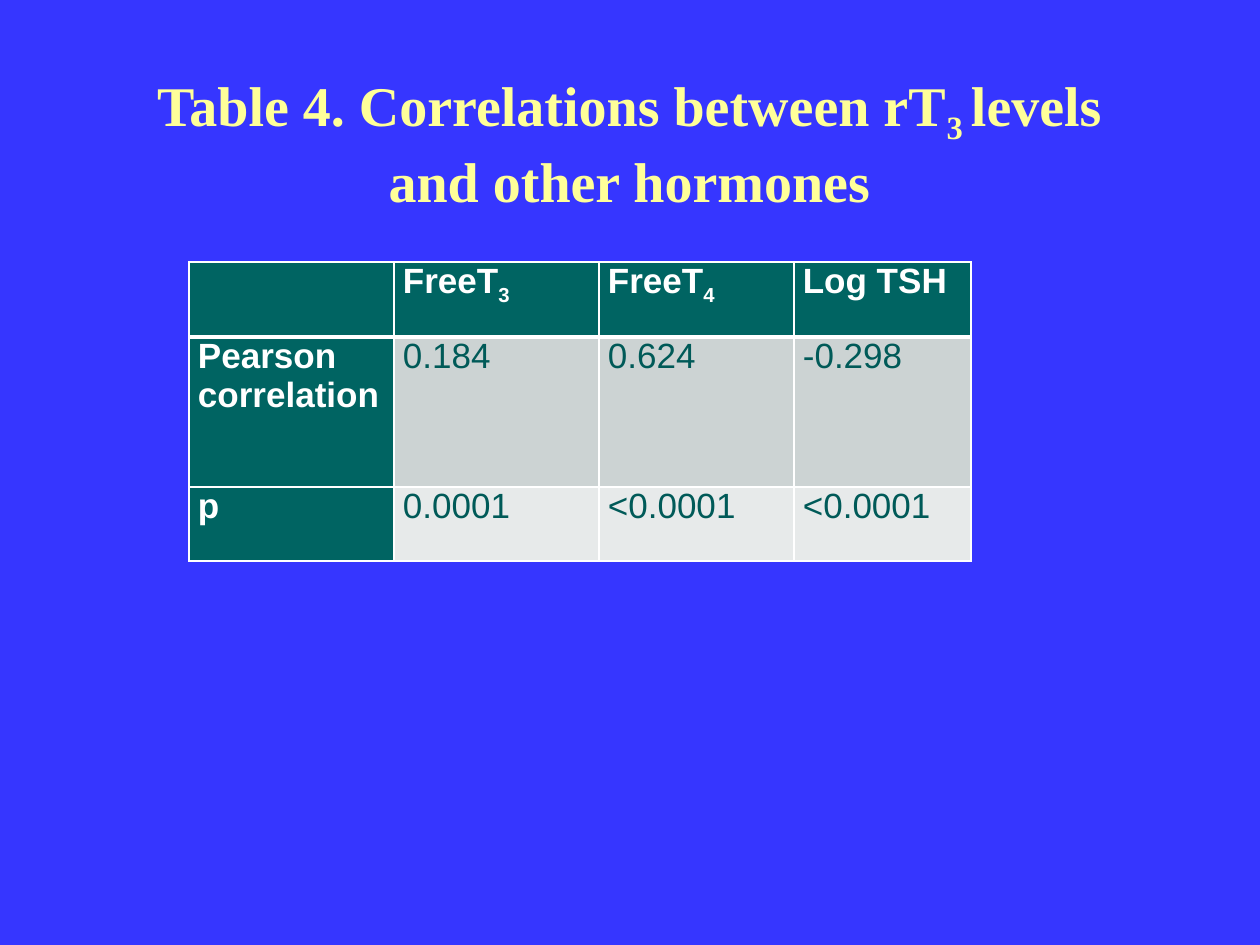
from lxml import etree
from pptx import Presentation
from pptx.dml.color import RGBColor
from pptx.enum.text import MSO_ANCHOR, PP_ALIGN
from pptx.oxml.ns import qn
from pptx.util import Emu, Pt

TOP = MSO_ANCHOR.TOP
CENTER = PP_ALIGN.CENTER
LEFT = PP_ALIGN.LEFT
EMU_PER_PX = 914400 / 126

BACKGROUND = "3636FF"
YELLOW = "FFFF99"
WHITE = "FFFFFF"
TEAL = "006462"
DARK_TEAL = "005A58"
BAND_FILLS = ["CCD3D3", "E7EAEA"]

COLUMN_WIDTHS = [205, 205, 195, 177]
ROW_HEIGHTS = [75, 150, 74]
# Each cell is a list of (text, is_subscript) runs
ROWS = [
    [[], [("FreeT", False), ("3", True)], [("FreeT", False), ("4", True)],
     [("Log TSH", False)]],
    [[(text, False)] for text in
     ("Pearson correlation", "0.184", "0.624", "-0.298")],
    [[(text, False)] for text in ("p", "0.0001", "<0.0001", "<0.0001")],
]


def px(length):
    return Emu(round(length * EMU_PER_PX))


def color(value):
    return RGBColor.from_string(value)


class SlideBuilder:
    def __init__(self, slide):
        self.slide = slide
        self.title_font, self.title_size = "Times New Roman", 32
        self.table_font, self.table_size = "Arial", 20

    def background(self, fill):
        self.slide.background.fill.solid()
        self.slide.background.fill.fore_color.rgb = color(fill)

    def runs(self, para, parts, font, size, text_color, bold):
        for text, is_subscript in parts:
            span = para.add_run()
            span.text = text
            span.font.name, span.font.size = font, Pt(size)
            span.font.bold = bold
            span.font.color.rgb = color(text_color)
            if is_subscript:
                span.font._element.set("baseline", "-25000")

    def title(self, left, top, width, height, parts):
        box = self.slide.shapes.add_textbox(*map(px, (left, top, width, height)))
        frame = box.text_frame
        frame.word_wrap = True
        frame.vertical_anchor = TOP
        frame.margin_top = frame.margin_bottom = 0
        para = frame.paragraphs[0]
        para.alignment = CENTER
        self.runs(para, parts, self.title_font, self.title_size, YELLOW, True)

    def borders(self, cell, widths):
        properties = cell._tc.get_or_add_tcPr()
        for index, (side, width) in enumerate(widths.items()):
            line = etree.Element(qn(f"a:ln{side}"), w=str(Pt(width)))
            fill = etree.SubElement(line, qn("a:solidFill"))
            etree.SubElement(fill, qn("a:srgbClr"), val=WHITE)
            properties.insert(index, line)

    def cell(self, cell, parts, fill, text_color, bold):
        cell.fill.solid()
        cell.fill.fore_color.rgb = color(fill)
        cell.margin_left = cell.margin_right = px(9)
        cell.margin_top = cell.margin_bottom = 0
        cell.vertical_anchor = TOP
        para = cell.text_frame.paragraphs[0]
        para.alignment = LEFT
        self.runs(para, parts, self.table_font, self.table_size, text_color, bold)

    def table(self, left, top, column_widths, row_heights, rows):
        table = self.slide.shapes.add_table(
            len(rows), len(column_widths), px(left), px(top),
            px(sum(column_widths)), px(sum(row_heights))).table
        table.first_col = True
        for column, width in zip(table.columns, column_widths):
            column.width = px(width)
        for row, height in zip(table.rows, row_heights):
            row.height = px(height)
        for r, row in enumerate(rows):
            for c, parts in enumerate(row):
                is_header = r == 0 or c == 0
                fill = TEAL if is_header else BAND_FILLS[r - 1]
                text_color = WHITE if is_header else DARK_TEAL
                cell = table.cell(r, c)
                self.cell(cell, parts, fill, text_color, is_header)
                # A heavy rule separates the header row from the body
                self.borders(cell, {"L": 1, "R": 1, "T": 3 if r == 1 else 1,
                                    "B": 3 if r == 0 else 1})


def main():
    deck = Presentation()
    deck.slide_width, deck.slide_height = px(1260), px(945)
    page = SlideBuilder(deck.slides.add_slide(deck.slide_layouts[6]))
    page.background(BACKGROUND)

    # Title
    page.title(94, 70, 1071, 158, [
        ("Table 4. Correlations between rT", False), ("3 ", True),
        ("levels and other hormones", False)])

    # Correlation table
    page.table(189, 262, COLUMN_WIDTHS, ROW_HEIGHTS, ROWS)

    deck.save("out.pptx")


if __name__ == "__main__":
    main()
